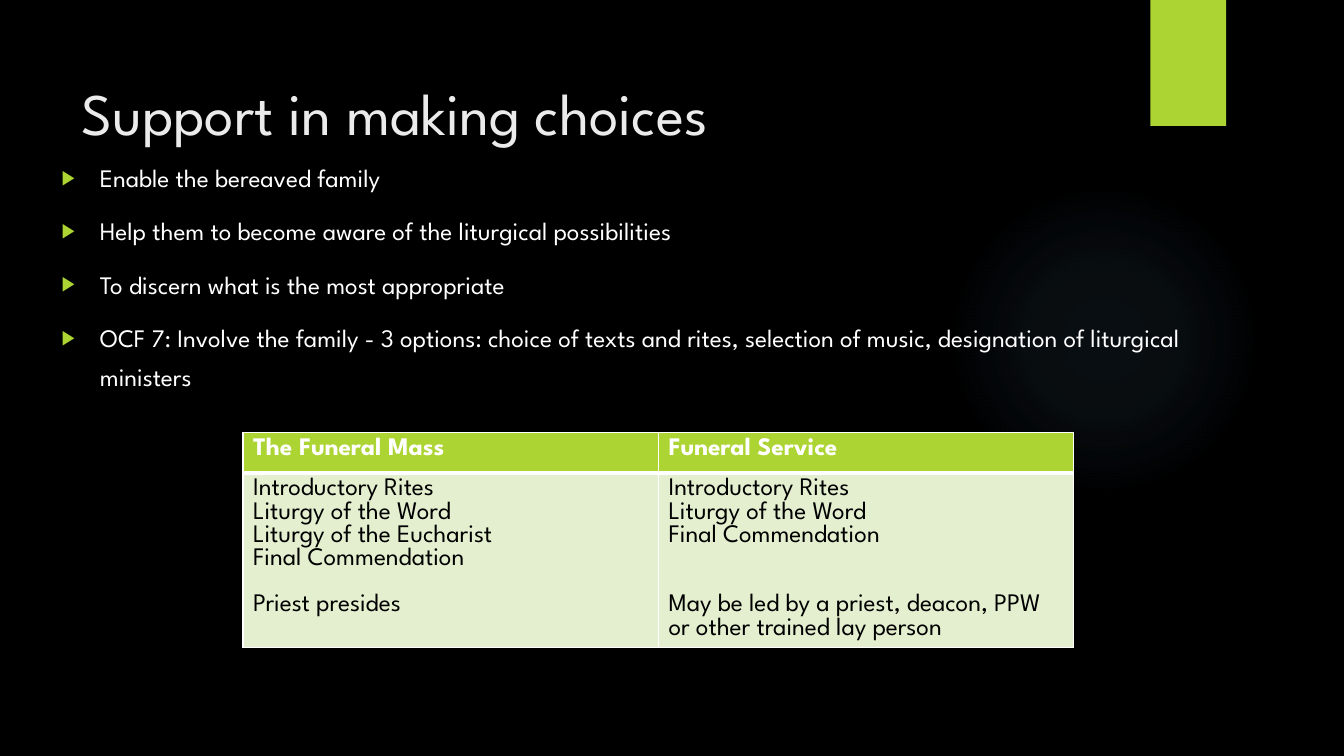
import pptx
import pptx.dml.color
import pptx.enum.shapes
import pptx.enum.text
import pptx.oxml
import pptx.oxml.ns
import pptx.util

RGB = pptx.dml.color.RGBColor
Pt = pptx.util.Pt

BLACK = RGB(0x00, 0x00, 0x00)
WHITE = RGB(0xFF, 0xFF, 0xFF)
OFF_WHITE = RGB(0xEB, 0xEB, 0xEB)
LIME = RGB(0xAC, 0xD4, 0x33)
PALE_LIME = RGB(0xE3, 0xEF, 0xCE)
SKY = RGB(0x7A, 0xC4, 0xF0)

FONT = "League Spartan"
LINE_PITCH = 16.56  # points, one table line
BODY_SPACING = 1.3

WIDTH = pptx.util.Inches(13.33)
HEIGHT = pptx.util.Inches(7.5)

TITLE = "Support in making choices"
AIMS = [
    "Enable the bereaved family",
    "Help them to become aware of the liturgical possibilities",
    "To discern what is the most appropriate",
    "OCF 7: Involve the family - 3 options: choice of texts and rites, "
    "selection of music, designation of liturgical ministers",
]
# Heading, parts of the rite, who presides
RITES = [
    ("The Funeral Mass",
     ["Introductory Rites", "Liturgy of the Word", "Liturgy of the Eucharist",
      "Final Commendation"],
     "Priest presides"),
    ("Funeral Service",
     ["Introductory Rites", "Liturgy of the Word", "Final Commendation"],
     "May be led by a priest, deacon, PPW or other trained lay person"),
]


def share(left, top, width, height):
    """Turn percentages of the slide into a box of lengths."""
    return (int(WIDTH * left / 100), int(HEIGHT * top / 100),
            int(WIDTH * width / 100), int(HEIGHT * height / 100))


def xml(tag, content="", attributes=""):
    namespace = pptx.oxml.ns.nsdecls("a")
    return pptx.oxml.parse_xml(f"<a:{tag} {namespace} {attributes}>{content}</a:{tag}>")


def set_font(paragraph, size, color, bold=False):
    paragraph.font.color.rgb = color
    for name, value in {"name": FONT, "size": Pt(size), "bold": bold}.items():
        setattr(paragraph.font, name, value)


def place(placeholder, box):
    for name, value in zip(("left", "top", "width", "height"), box):
        setattr(placeholder, name, value)
    frame = placeholder.text_frame
    frame.word_wrap = True
    frame.auto_size = pptx.enum.text.MSO_AUTO_SIZE.NONE
    frame.vertical_anchor = pptx.enum.text.MSO_ANCHOR.TOP
    return frame


def add_backdrop_shape(slide, kind, box, layer):
    shape = slide.shapes.add_shape(kind, *box)
    shape.shadow.inherit = False
    shape.line.fill.background()
    slide.shapes._spTree.insert(2 + layer, shape._element)
    return shape


def add_backdrop(slide, glow_box, tab_box):
    slide.background.fill.solid()
    slide.background.fill.fore_color.rgb = BLACK
    kinds = pptx.enum.shapes.MSO_SHAPE

    glow = add_backdrop_shape(slide, kinds.OVAL, glow_box, 0)
    stops = "".join(
        f'<a:gs pos="{position * 1000}"><a:srgbClr val="{SKY}">'
        f'<a:alpha val="{alpha * 1000}"/></a:srgbClr></a:gs>'
        for position, alpha in ((0, 7), (36, 6), (69, 0), (100, 0)))
    centre = '<a:fillToRect l="50000" t="50000" r="50000" b="50000"/>'
    geometry = glow._element.spPr.find(pptx.oxml.ns.qn("a:prstGeom"))
    geometry.addnext(xml(
        "gradFill", f'<a:gsLst>{stops}</a:gsLst><a:path path="circle">{centre}</a:path>'))

    tab = add_backdrop_shape(slide, kinds.RECTANGLE, tab_box, 1)
    tab.fill.solid()
    tab.fill.fore_color.rgb = LIME


def fill_title(slide, box):
    heading = place(slide.shapes.title, box).paragraphs[0]
    heading.text = TITLE
    heading.alignment = pptx.enum.text.PP_ALIGN.LEFT
    heading.line_spacing = BODY_SPACING
    set_font(heading, 42, OFF_WHITE)


def fill_aims(slide, box):
    frame = place(slide.placeholders[1], box)
    frame.text = "\n".join(AIMS)
    indent = pptx.util.Inches(0.38)
    for number, aim in enumerate(frame.paragraphs):
        aim.line_spacing = BODY_SPACING
        aim.space_before = Pt(10 if number else 0)
        properties = aim._p.get_or_add_pPr()
        properties.set("marL", str(indent))
        properties.set("indent", str(-indent))
        properties.append(xml("buClr", f'<a:srgbClr val="{LIME}"/>'))
        properties.append(xml("buSzPct", attributes='val="80000"'))
        properties.append(xml("buChar", attributes='char="▶"'))
        set_font(aim, 18, WHITE)


def style_cell(cell, color, top, bottom):
    properties = cell._tc.get_or_add_tcPr()
    for side, points in {"lnL": 1, "lnR": 1, "lnT": top, "lnB": bottom}.items():
        properties.append(xml(
            side, f'<a:solidFill><a:srgbClr val="{WHITE}"/></a:solidFill>',
            f'w="{Pt(points)}"'))
    cell.fill.solid()
    cell.fill.fore_color.rgb = color


def add_rites_table(slide, box):
    table = slide.shapes.add_table(2, len(RITES), *box).table
    for row, part in zip(table.rows, (0.19, 0.81)):
        row.height = int(box[3] * part)
    longest = max(len(parts) for _, parts, _ in RITES)
    for column, (name, parts, leader) in enumerate(RITES):
        head, body = table.cell(0, column), table.cell(1, column)
        style_cell(head, LIME, 1, 3)
        style_cell(body, PALE_LIME, 3, 1)
        head.text = name
        set_font(head.text_frame.paragraphs[0], 18, WHITE, True)
        body.text = "\n".join(parts + [leader])
        for line in body.text_frame.paragraphs:
            set_font(line, 18, BLACK)
        # Leaders line up one line below the longest list
        line.space_before = Pt(LINE_PITCH * (longest - len(parts) + 1))


def main():
    deck = pptx.Presentation()
    deck.slide_width, deck.slide_height = WIDTH, HEIGHT
    slide = deck.slides.add_slide(deck.slide_layouts[1])
    add_backdrop(slide, share(70.6, 24.4, 23.1, 41.07), share(85.6, 0, 5.63, 16.67))
    fill_title(slide, share(5.33, 6.67, 77.2, 20.4))
    fill_aims(slide, share(3.83, 19.6, 90.25, 33.87))
    add_rites_table(slide, share(18.08, 57.2, 61.82, 28.4))
    deck.save("out.pptx")


if __name__ == "__main__":
    main()
